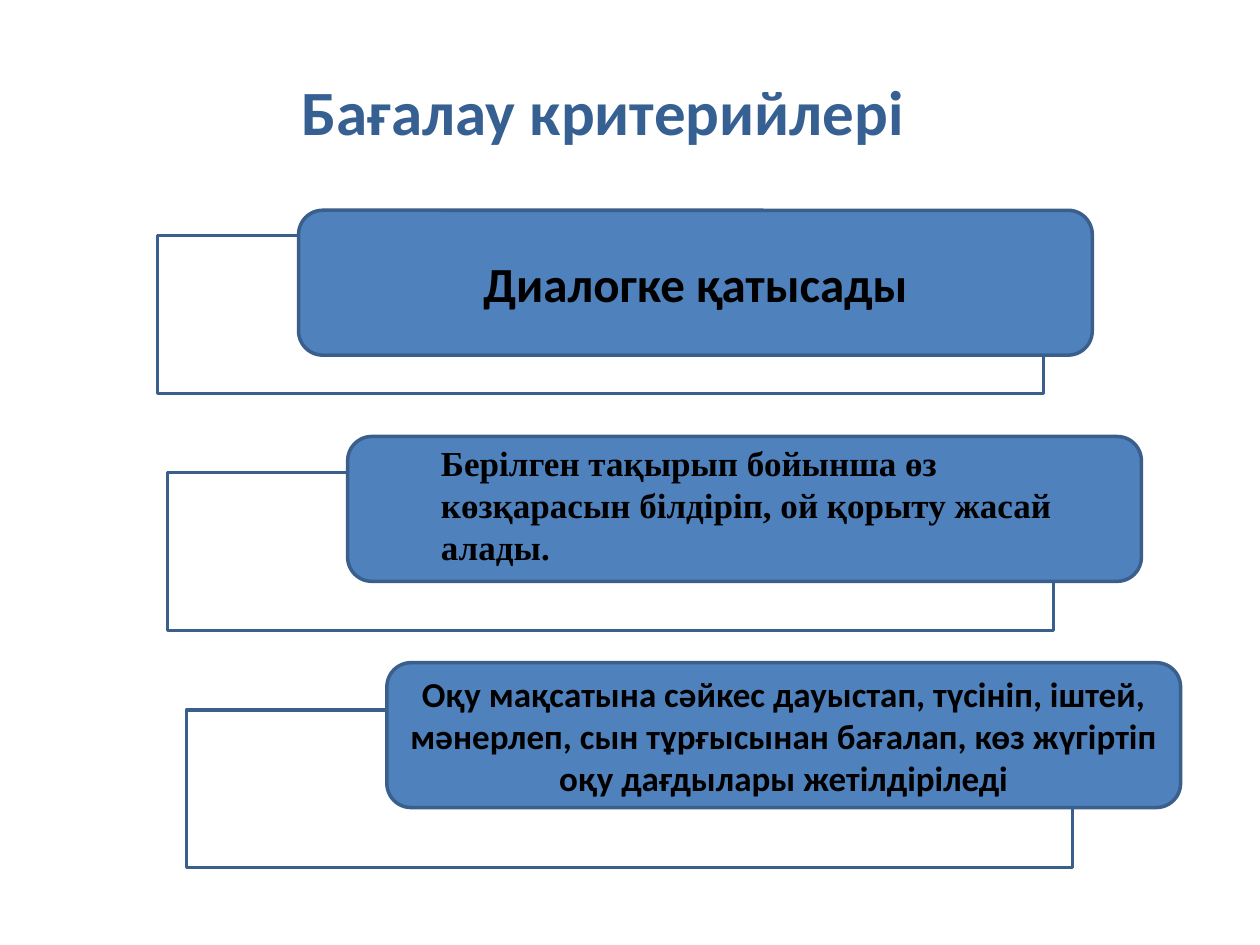
from pptx import Presentation
from pptx.dml.color import RGBColor
from pptx.enum import shapes, text
from pptx.util import Cm, Pt

# Content: one criterion per step, lengths in cm
TITLE = "Бағалау критерийлері"
CRITERIA = [
    {"words": "Диалогке қатысады",
     "size": "large", "frame_left": 3.18, "card_left": 6.02},
    {"words": "Берілген тақырып бойынша өз көзқарасын білдіріп, "
              "ой қорыту жасай алады.",
     "size": "body", "frame_left": 3.38, "card_left": 7.01,
     "label": (8.64, 8.76, 12.98, 2.82)},
    {"words": "Оқу мақсатына сәйкес дауыстап, түсініп, іштей, мәнерлеп, "
              "сын тұрғысынан бағалап, көз жүгіртіп оқу дағдылары жетілдіріледі",
     "size": "body", "frame_left": 3.76, "card_left": 7.8},
]

THEME = {
    "title": RGBColor(0x37, 0x60, 0x92),
    "ink": RGBColor(0, 0, 0),
    "frame": RGBColor(0xFF, 0xFF, 0xFF),
    "card": RGBColor(0x4F, 0x81, 0xBD),
    "outline": RGBColor(0x3A, 0x5F, 0x8C),
    "outline_width": Pt(2),
    "heading_size": Pt(36), "large": Pt(28), "body": Pt(20),
    "sans": "Calibri", "serif": "Times New Roman",
}

# Rows repeat at a fixed step
FRAME_TOP, FRAME_STEP, FRAME_SIZE = 4.75, 4.78, (17.86, 3.18)
CARD_TOP, CARD_STEP, CARD_SIZE = 4.24, 4.56, (16, 2.92)


def add_box(slide, kind, left, top, size, fill):
    box = slide.shapes.add_shape(kind, *map(Cm, (left, top, *size)))
    box.shadow.inherit = False
    box.fill.solid()
    box.fill.fore_color.rgb = THEME[fill]
    box.line.color.rgb = THEME["outline"]
    box.line.width = THEME["outline_width"]
    return box


def write(holder, words, size, color="ink", font="sans",
          align=text.PP_ALIGN.CENTER):
    frame = holder.text_frame
    frame.word_wrap = True
    frame.vertical_anchor = text.MSO_ANCHOR.MIDDLE
    paragraph = frame.paragraphs[0]
    paragraph.alignment = align
    run = paragraph.add_run()
    run.text = words
    run.font.name = THEME[font]
    run.font.size = THEME[size]
    run.font.bold = True
    run.font.color.rgb = THEME[color]


def main():
    deck = Presentation()
    deck.slide_width, deck.slide_height = Cm(25.4), Cm(19.05)
    slide = deck.slides.add_slide(deck.slide_layouts[5])

    # Title
    heading = slide.shapes.title
    heading.left, heading.top = Cm(3.58), Cm(1.19)
    heading.width, heading.height = Cm(17.15), Cm(2.08)
    write(heading, TITLE, "heading_size", color="title")

    # Outlined frames behind the cards
    for row, criterion in enumerate(CRITERIA):
        add_box(slide, shapes.MSO_SHAPE.RECTANGLE, criterion["frame_left"],
                FRAME_TOP + row * FRAME_STEP, FRAME_SIZE, "frame")

    # Cards; a criterion with its own label area is left-aligned there
    for row, criterion in enumerate(CRITERIA):
        card = add_box(slide, shapes.MSO_SHAPE.ROUNDED_RECTANGLE,
                       criterion["card_left"], CARD_TOP + row * CARD_STEP,
                       CARD_SIZE, "card")
        if "label" in criterion:
            label = slide.shapes.add_textbox(*map(Cm, criterion["label"]))
            write(label, criterion["words"], criterion["size"],
                  font="serif", align=text.PP_ALIGN.LEFT)
        else:
            write(card, criterion["words"], criterion["size"])

    deck.save("out.pptx")


if __name__ == "__main__":
    main()
